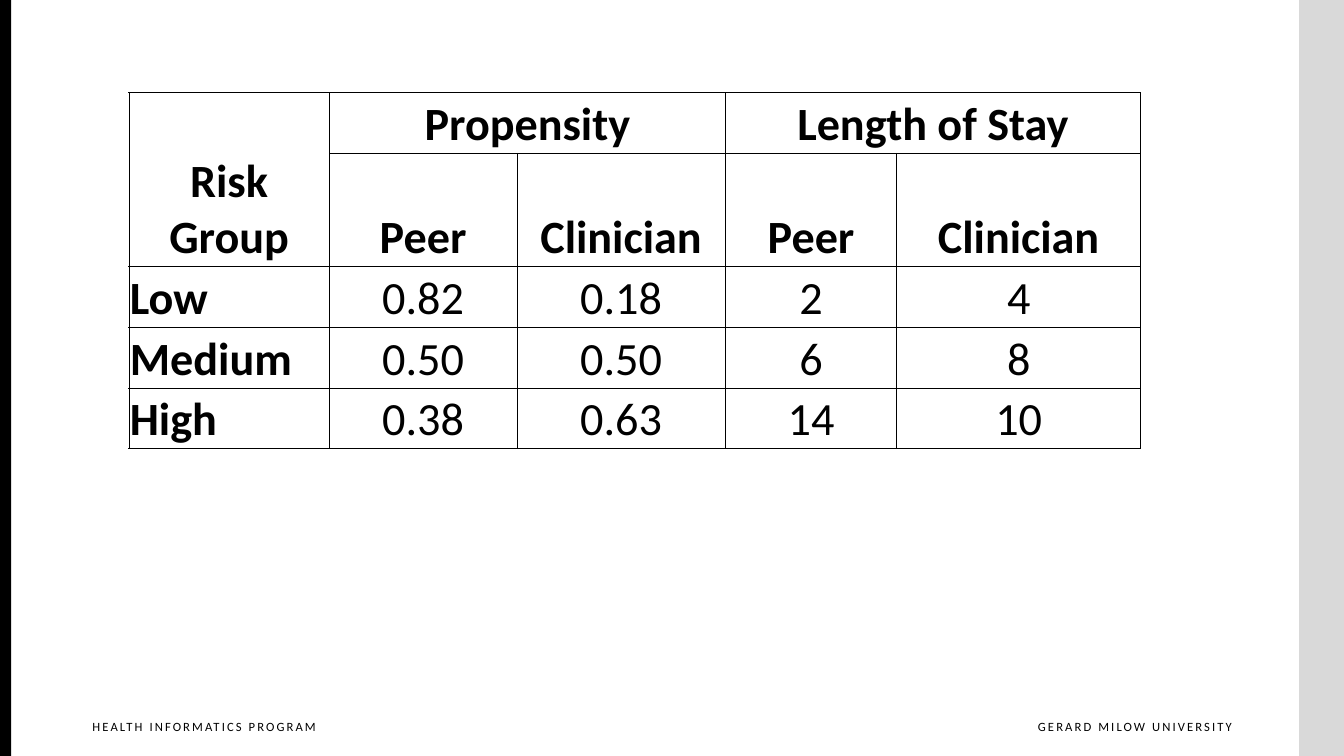
from lxml import etree
from pptx import Presentation
from pptx.dml.color import RGBColor
from pptx.enum.shapes import MSO_SHAPE
from pptx.enum.text import MSO_ANCHOR, PP_ALIGN
from pptx.oxml.ns import qn
from pptx.util import Pt

BLACK = RGBColor(0x00, 0x00, 0x00)
WHITE = RGBColor(0xFF, 0xFF, 0xFF)
GREY = RGBColor(0xD9, 0xD9, 0xD9)
FONT = "Calibri"

LEFT, CENTER, RIGHT = PP_ALIGN.LEFT, PP_ALIGN.CENTER, PP_ALIGN.RIGHT
TOP, BOTTOM = MSO_ANCHOR.TOP, MSO_ANCHOR.BOTTOM
RECTANGLE = MSO_SHAPE.RECTANGLE

SLIDE_WIDTH, SLIDE_HEIGHT = 960, 540
COLUMN_WIDTHS = [143.3, 133.9, 149, 122.4, 174.2]
ROW_HEIGHTS = [43.2, 80.9, 43.2, 43.6, 43.2]
RISK_TABLE = [
    ["Risk Group", "Propensity", "", "Length of Stay", ""],
    ["", "Peer", "Clinician", "Peer", "Clinician"],
    ["Low", "0.82", "0.18", "2", "4"],
    ["Medium", "0.50", "0.50", "6", "8"],
    ["High", "0.38", "0.63", "14", "10"],
]
HEADER_ROWS = 2
# First and last (row, column) of each merged heading
HEADING_SPANS = [((0, 0), (1, 0)), ((0, 1), (0, 2)), ((0, 3), (0, 4))]


def write_text(frame, text, size, bold=False, align=LEFT, anchor=TOP, spacing=0):
    frame.word_wrap = True
    frame.vertical_anchor = anchor
    paragraph = frame.paragraphs[0]
    paragraph.alignment = align
    run = paragraph.add_run()
    run.text = text
    run.font.name = FONT
    run.font.size = Pt(size)
    run.font.bold = bold
    run.font.color.rgb = BLACK
    if spacing:
        run.font._element.set("spc", str(int(spacing * 100)))


def add_side_bar(slide, left, width, color):
    bar = slide.shapes.add_shape(RECTANGLE, Pt(left), Pt(0), Pt(width), Pt(SLIDE_HEIGHT))
    bar.shadow.inherit = False
    bar.fill.solid()
    bar.fill.fore_color.rgb = color
    bar.line.fill.background()


def add_footer(slide, text, left, width, align):
    footer = slide.shapes.add_textbox(Pt(left), Pt(509.8), Pt(width), Pt(23.8))
    frame = footer.text_frame
    frame.margin_left, frame.margin_right = Pt(7.2), Pt(0)
    frame.margin_top = frame.margin_bottom = Pt(3.6)
    write_text(frame, text, size=9, align=align, spacing=1.5)


def add_borders(cell, color, width):
    properties = cell._tc.get_or_add_tcPr()
    for side in ("a:lnL", "a:lnR", "a:lnT", "a:lnB"):
        line = etree.SubElement(properties, qn(side), w=str(Pt(width)))
        fill = etree.SubElement(line, qn("a:solidFill"))
        etree.SubElement(fill, qn("a:srgbClr"), val=str(color))


def style_cell(cell):
    cell.margin_left = cell.margin_right = cell.margin_top = Pt(0.75)
    cell.margin_bottom = Pt(0)
    cell.vertical_anchor = BOTTOM
    add_borders(cell, BLACK, 0.5)
    cell.fill.solid()
    cell.fill.fore_color.rgb = WHITE


def add_risk_table(slide):
    table = slide.shapes.add_table(
        len(ROW_HEIGHTS), len(COLUMN_WIDTHS), Pt(92), Pt(66.2),
        Pt(sum(COLUMN_WIDTHS)), Pt(sum(ROW_HEIGHTS))).table
    table.first_row = table.horz_banding = False
    for column, width in zip(table.columns, COLUMN_WIDTHS):
        column.width = Pt(width)
    for row, height in zip(table.rows, ROW_HEIGHTS):
        row.height = Pt(height)
    for first, last in HEADING_SPANS:
        table.cell(*first).merge(table.cell(*last))

    for r, values in enumerate(RISK_TABLE):
        for c, value in enumerate(values):
            cell = table.cell(r, c)
            style_cell(cell)
            if cell.is_spanned:
                continue
            is_header = r < HEADER_ROWS
            write_text(cell.text_frame, value, size=33, bold=is_header or c == 0,
                       align=CENTER if is_header or c else LEFT, anchor=None)


def main():
    prs = Presentation()
    prs.slide_width, prs.slide_height = Pt(SLIDE_WIDTH), Pt(SLIDE_HEIGHT)
    slide = prs.slides.add_slide(prs.slide_layouts[6])
    slide.background.fill.solid()
    slide.background.fill.fore_color.rgb = WHITE

    # Side bars
    add_side_bar(slide, SLIDE_WIDTH - 32, 32, GREY)
    add_side_bar(slide, 0, 8, BLACK)

    # Footers
    add_footer(slide, "GERARD MILOW UNIVERSITY", 710.6, 169.2, RIGHT)
    add_footer(slide, "HEALTH INFORMATICS PROGRAM", 59, 182.9, LEFT)

    # Propensity and length of stay by risk group
    add_risk_table(slide)

    prs.save("out.pptx")


if __name__ == "__main__":
    main()
